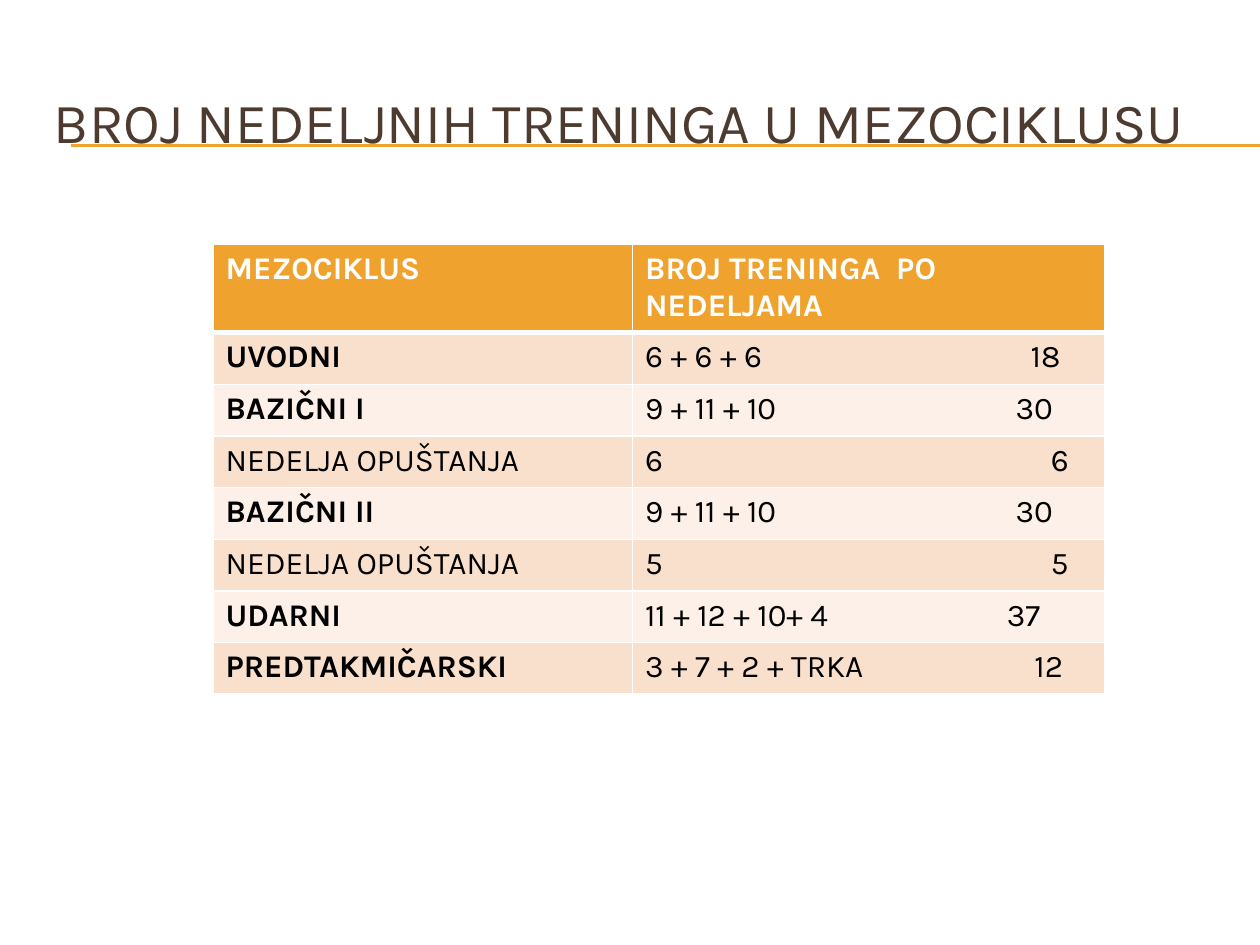
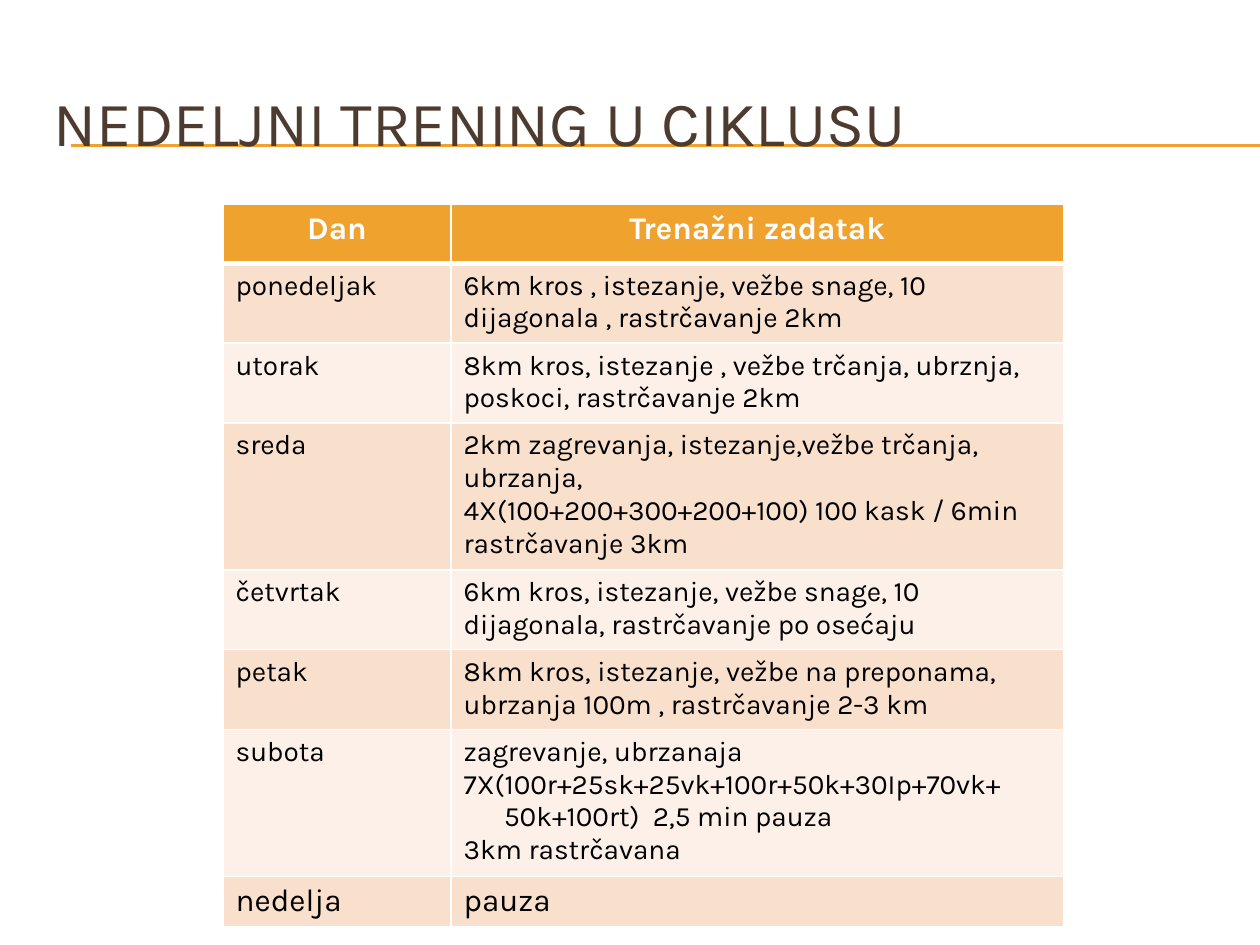
from lxml import etree
from pptx import Presentation
from pptx.dml.color import RGBColor
from pptx.enum import shapes, text
from pptx.oxml import ns
from pptx.util import Inches, Pt

HUES = {"gold": "F0A22E", "brown": "4E3B30", "peach": "F9E0CD",
        "cream": "FCF0E8", "white": "FFFFFF", "black": "000000"}
FONT = "Karla"

PHASES = [
    ("UVODNI", "6 + 6 + 6", "18", 3.06),
    ("BAZIČNI I", "9 + 11 + 10", "30", 2.94),
    ("NEDELJA OPUŠTANJA", "6", "6", 3.22),
    ("BAZIČNI II", "9 + 11 + 10", "30", 2.94),
    ("NEDELJA OPUŠTANJA", "5", "5", 3.22),
    ("UDARNI", "11 + 12 + 10+ 4", "37", 2.87),
    ("PREDTAKMIČARSKI", "3 + 7 + 2 + TRKA", "12", 3.09),
]

DAYS = [
    ("ponedeljak", "6km kros , istezanje, vežbe snage, 10 dijagonala , rastrčavanje 2km"),
    ("utorak", "8km kros, istezanje , vežbe trčanja, ubrznja, poskoci, rastrčavanje 2km"),
    ("sreda", "2km zagrevanja, istezanje,vežbe trčanja, ubrzanja,\n"
              "4X(100+200+300+200+100) 100 kask / 6min\nrastrčavanje 3km"),
    ("četvrtak", "6km kros, istezanje, vežbe snage, 10 dijagonala, rastrčavanje po osećaju"),
    ("petak", "8km kros, istezanje, vežbe na preponama, ubrzanja 100m , rastrčavanje 2-3 km"),
    ("subota", "zagrevanje, ubrzanaja\n7X(100r+25sk+25vk+100r+50k+30Ip+70vk+\n"
               "50k+100rt)  2,5 min pauza\n3km rastrčavana"),
    ("nedelja", "pauza"),
]


class Deck:
    def __init__(self):
        self.prs = Presentation()
        self.prs.slide_width, self.prs.slide_height = Inches(10), Inches(7.5)
        self.slide = None

    def hue(self, name):
        return RGBColor.from_string(HUES[name])

    def start(self, title, size):
        self.slide = self.prs.slides.add_slide(self.prs.slide_layouts[6])
        for y in (1.15, 1.16):
            self.rule(y)
        self.title(title, size)

    def rule(self, y):
        line = self.slide.shapes.add_connector(
            shapes.MSO_CONNECTOR.STRAIGHT, Inches(0.56), Inches(y), Inches(10), Inches(y))
        line.line.color.rgb = self.hue("gold")
        line.line.width = Pt(0.75)
        etree.SubElement(line._element.spPr, ns.qn("a:effectLst"))

    def title(self, words, size):
        box = self.slide.shapes.add_textbox(Inches(0.33), Inches(0.5), Inches(9.5), Inches(0.92))
        frame = box.text_frame
        frame.word_wrap = True
        frame.vertical_anchor = text.MSO_ANCHOR.MIDDLE
        frame.text = words
        self.style(frame, size, "brown")

    def style(self, frame, size, hue, bold=False):
        for para in frame.paragraphs:
            for run in para.runs:
                font = run.font
                font.name, font.size, font.bold = FONT, Pt(size), bold
                font.color.rgb = self.hue(hue)

    def edges(self, cell, row):
        props = cell._tc.get_or_add_tcPr()
        wide = {"lnL": 1, "lnR": 1, "lnT": 3 if row == 1 else 1, "lnB": 3 if row == 0 else 1}
        for tag, width in wide.items():
            line = etree.SubElement(props, ns.qn("a:" + tag), w=str(Pt(width)))
            fill = etree.SubElement(line, ns.qn("a:solidFill"))
            etree.SubElement(fill, ns.qn("a:srgbClr"), val=HUES["white"])

    def table(self, left, top, cols, rows, data, size):
        frame = self.slide.shapes.add_table(
            len(rows), len(cols), Inches(left), Inches(top), Inches(sum(cols)), Inches(sum(rows)))
        grid = frame.table
        for col, width in zip(grid.columns, cols):
            col.width = Inches(width)
        for r, (high, words) in enumerate(zip(rows, data)):
            grid.rows[r].height = Inches(high)
            for c, word in enumerate(words):
                cell = grid.cell(r, c)
                self.edges(cell, r)
                cell.fill.solid()
                cell.fill.fore_color.rgb = self.hue(("cream", "peach")[r % 2] if r else "gold")
                cell.text_frame.text = word
                if r:
                    self.style(cell.text_frame, size, "black")
                else:
                    self.style(cell.text_frame, 18, "white", True)
        return grid

    def tab(self, para, place):
        stops = etree.SubElement(para._p.get_or_add_pPr(), ns.qn("a:tabLst"))
        etree.SubElement(stops, ns.qn("a:tab"), pos=str(Inches(place)), algn="l")

    def indent(self, para, width):
        para._p.get_or_add_pPr().set("marL", str(Inches(width)))


def phases(deck):
    deck.start("BROJ NEDELJNIH TRENINGA U MEZOCIKLUSU", 32.4)
    data = [("MEZOCIKLUS", "BROJ TRENINGA  PO NEDELJAMA")]
    data += [(name, f"{weeks}\t{total}") for name, weeks, total, _ in PHASES]
    grid = deck.table(1.69, 1.94, [3.33, 3.75], [0.68] + [0.41] * len(PHASES), data, 18)
    for r, (name, _, _, place) in enumerate(PHASES, 1):
        deck.tab(grid.cell(r, 1).text_frame.paragraphs[0], place)
        bold = not name.startswith("NEDELJA")
        deck.style(grid.cell(r, 0).text_frame, 18, "black", bold)


def week(deck):
    deck.start("NEDELJNI TRENING U CIKLUSU", 36)
    data = [("Dan", "Trenažni zadatak")] + DAYS
    rows = [0.47, 0.62, 0.62, 1.14, 0.62, 0.62, 1.14, 0.39]
    grid = deck.table(1.77, 1.62, [1.81, 4.86], rows, data, 16)
    for c in range(2):
        grid.cell(0, c).text_frame.paragraphs[0].alignment = text.PP_ALIGN.CENTER
        deck.style(grid.cell(7, c).text_frame, 18, "black")
    deck.indent(grid.cell(6, 1).text_frame.paragraphs[2], 0.32)


def main():
    deck = Deck()
    phases(deck)
    week(deck)
    deck.prs.save("out.pptx")


if __name__ == "__main__":
    main()
